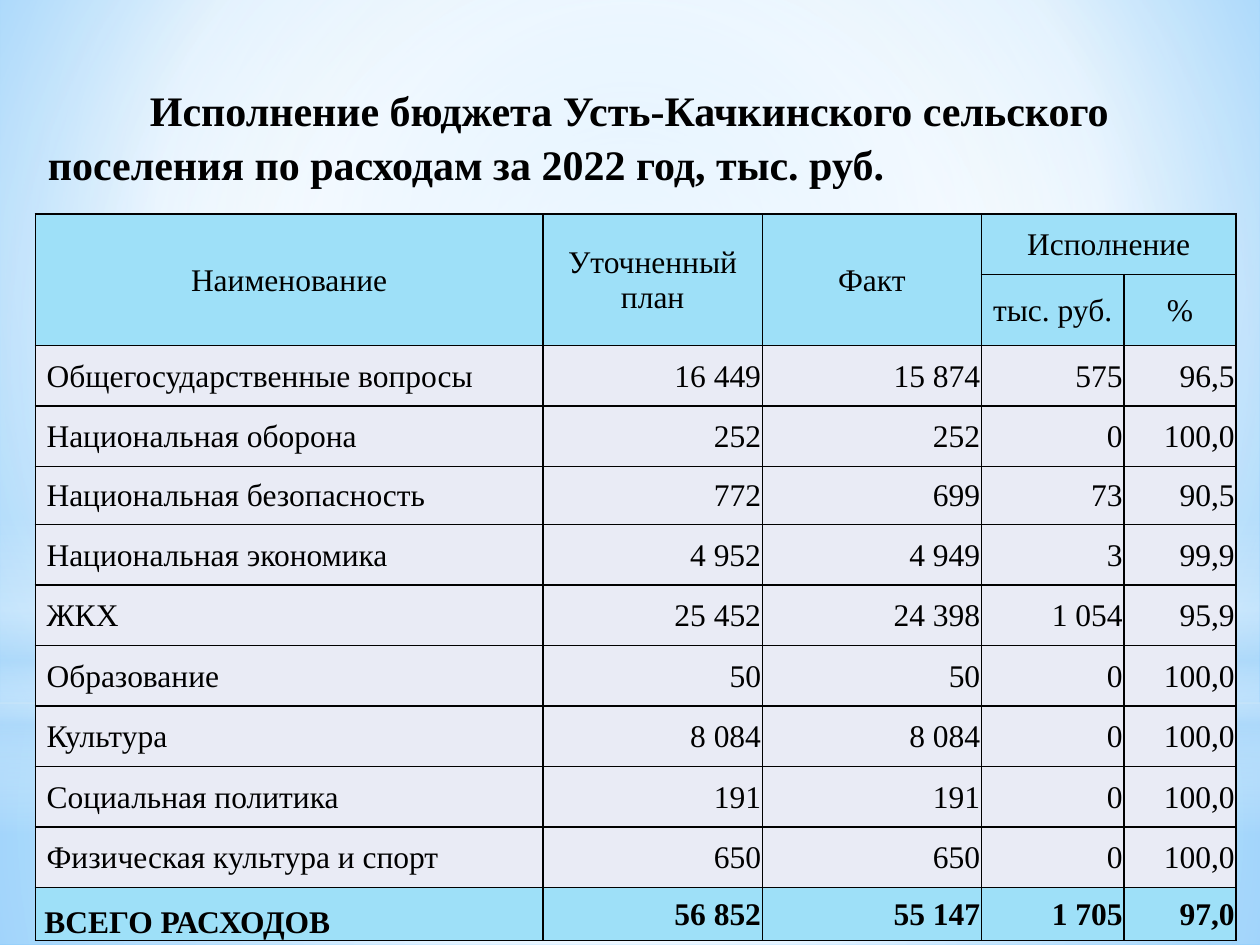
"""Slide with the execution of a rural settlement's budget by expenditure, 2022."""
from lxml import etree
from pptx import Presentation
from pptx.dml.color import RGBColor
from pptx.enum import shapes, text
from pptx.oxml import ns
from pptx.util import Inches, Pt

FONT = "Times New Roman"
HEADER, BODY, BLACK = "9EE0F8", "E9EBF5", "000000"


def rgb(value):
    return RGBColor.from_string(value)


def set_gradient(fill, owner, stops, direction):
    fill.gradient()
    gradient = owner.find(".//" + ns.qn("a:gradFill"))
    for child in list(gradient):
        gradient.remove(child)
    stop_list = etree.SubElement(gradient, ns.qn("a:gsLst"))
    for position, color, opacity in stops:
        stop = etree.SubElement(stop_list, ns.qn("a:gs"), pos=str(position * 1000))
        shade = etree.SubElement(stop, ns.qn("a:srgbClr"), val=color)
        etree.SubElement(shade, ns.qn("a:alpha"), val=str(opacity * 1000))
    if direction == "down":
        etree.SubElement(gradient, ns.qn("a:lin"), ang="5400000", scaled="0")
    else:
        circle = etree.SubElement(gradient, ns.qn("a:path"), path="circle")
        sides = {side: str(share * 1000) for side, share in zip("ltrb", direction)}
        etree.SubElement(circle, ns.qn("a:fillToRect"), **sides)


prs = Presentation()
prs.slide_width, prs.slide_height = Inches(10), Inches(7.5)
slide = prs.slides.add_slide(prs.slide_layouts[5])
sky = [(0, "9ED5FF", 100), (60, "FFFFFF", 100), (100, "5BB9FF", 100)]
set_gradient(slide.background.fill, slide._element, sky, (20, 10, 20, 60))

center = (50, 50, 50, 50)
RECT, OVAL = shapes.MSO_SHAPE.RECTANGLE, shapes.MSO_SHAPE.OVAL
glows = [
    (RECT, 5.58, 1.92, [(0, "FFFFFF", 91), (37, "FFFFFF", 76), (100, "B4DCFA", 79)], center),
    (RECT, 0, 5.58, [(0, "FFFFFF", 89), (48, "FFFFFF", 62), (100, "B4DCFA", 79)], center),
    (RECT, 4.12, 2.5, [(0, "FFFFFF", 0), (29, "FFFFFF", 30), (45, "B4DCFA", 40),
                       (55, "FFFFFF", 26), (65, "B4DCFA", 60), (100, "FFFFFF", 0)], "down"),
    (OVAL, 1.75, 5.58, [(0, "FFFFFF", 100), (56, "FFFFFF", 0)], center),
]
for outline, top, height, stops, direction in glows:
    glow = slide.shapes.add_shape(outline, 0, Inches(top), Inches(10), Inches(height))
    glow.shadow.inherit = False
    glow.line.fill.background()
    set_gradient(glow.fill, glow._element, stops, direction)

title = slide.shapes.title
slide.shapes._spTree.append(title._element)
title.left, title.top, title.width, title.height = map(Inches, (0.28, 0.6, 9.45, 0.71))
title.text_frame.text = "Исполнение бюджета Усть-Качкинского сельского поселения по расходам за 2022 год, тыс. руб."
title.text_frame.vertical_anchor = text.MSO_ANCHOR.TOP
title.text_frame.word_wrap = True
title.text_frame.auto_size = text.MSO_AUTO_SIZE.NONE
heading = title.text_frame.paragraphs[0]
heading.alignment = text.PP_ALIGN.LEFT
heading.line_spacing = 1.06
heading._p.get_or_add_pPr().set("indent", str(Inches(0.81)))
heading.font.name, heading.font.size, heading.font.bold = FONT, Pt(24), True
heading.font.color.rgb = rgb(BLACK)

rows = [
    ("Наименование", "Уточненный план", "Факт", "Исполнение", ""),
    ("", "", "", "тыс. руб.", "%"),
    ("Общегосударственные вопросы", "16 449", "15 874", "575", "96,5"),
    ("Национальная оборона", "252", "252", "0", "100,0"),
    ("Национальная безопасность", "772", "699", "73", "90,5"),
    ("Национальная экономика", "4 952", "4 949", "3", "99,9"),
    ("ЖКХ", "25 452", "24 398", "1 054", "95,9"),
    ("Образование", "50", "50", "0", "100,0"),
    ("Культура", "8 084", "8 084", "0", "100,0"),
    ("Социальная политика", "191", "191", "0", "100,0"),
    ("Физическая культура и спорт", "650", "650", "0", "100,0"),
    ("\u00a0ВСЕГО РАСХОДОВ", "56 852", "55 147", "1 705", "97,0"),
]
total = len(rows) - 1
budget = slide.shapes.add_table(len(rows), 5, Inches(0.28), Inches(1.7), Inches(9.53), Inches(5.59)).table
budget.first_row = budget.horz_banding = False
for column, width in zip(budget.columns, (4.03, 1.74, 1.74, 1.13, 0.89)):
    column.width = Inches(width)
special_heights = {1: 0.4, 4: 0.46, total: 0.42}
for r, values in enumerate(rows):
    budget.rows[r].height = Inches(special_heights.get(r, 0.48))
    for c, value in enumerate(values):
        cell = budget.cell(r, c)
        cell.text = value
        cell.margin_left = cell.margin_top = cell.margin_right = Inches(0.01)
        cell.margin_bottom = 0
        cell.vertical_anchor = text.MSO_ANCHOR.MIDDLE
        entry = cell.text_frame.paragraphs[0]
        entry.font.name, entry.font.size, entry.font.bold = FONT, Pt(18), r == total
        entry.font.color.rgb = rgb(BLACK)
        if r < 2:
            entry.alignment = text.PP_ALIGN.CENTER
        elif c:
            entry.alignment = text.PP_ALIGN.RIGHT
        elif r < total:
            entry._p.get_or_add_pPr().set("marL", str(Inches(0.08)))
        else:
            cell.vertical_anchor = text.MSO_ANCHOR.BOTTOM
        properties = cell._tc.get_or_add_tcPr()
        for side in ("lnL", "lnR", "lnT", "lnB"):
            border = etree.SubElement(properties, ns.qn("a:" + side), w=str(Pt(1)))
            ink = etree.SubElement(border, ns.qn("a:solidFill"))
            etree.SubElement(ink, ns.qn("a:srgbClr"), val=BLACK)
        cell.fill.solid()
        cell.fill.fore_color.rgb = rgb(HEADER if r < 2 or r == total else BODY)
for c in range(3):
    budget.cell(0, c).merge(budget.cell(1, c))
budget.cell(0, 3).merge(budget.cell(0, 4))

prs.save("out.pptx")
